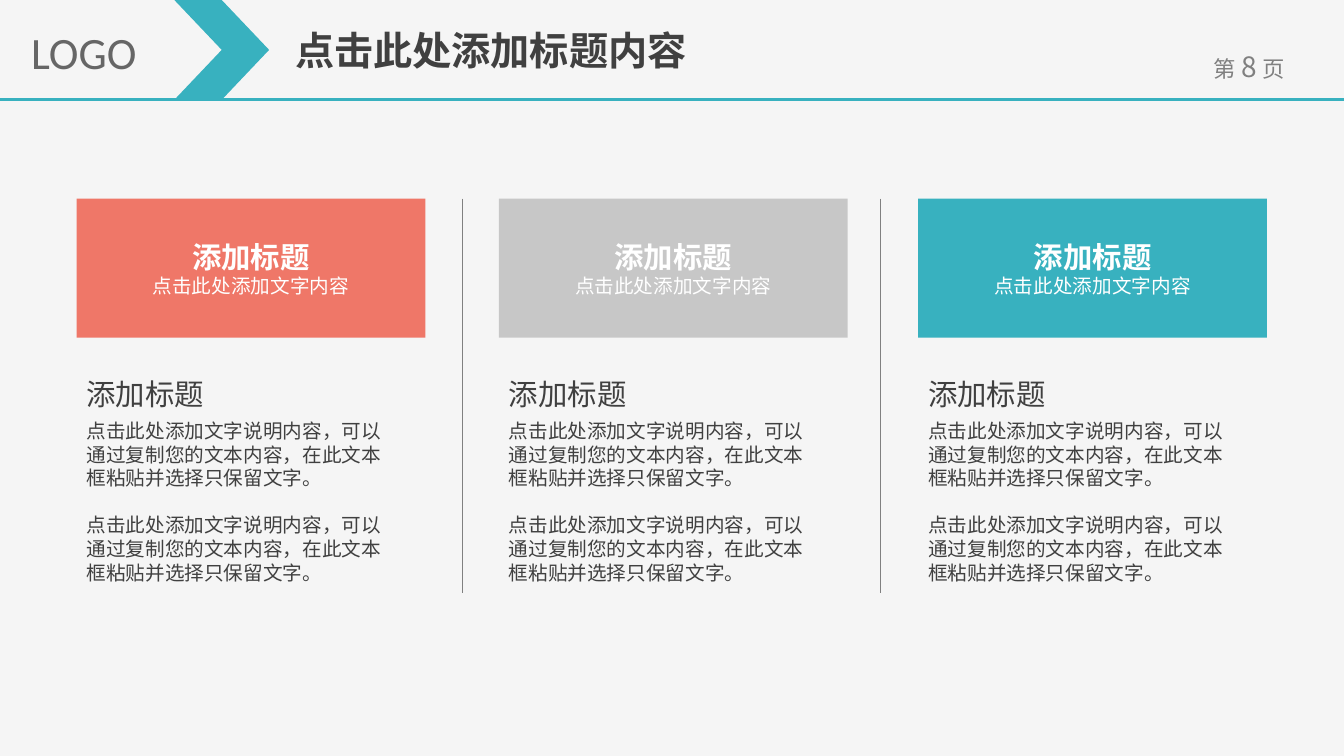
from dataclasses import dataclass

from lxml import etree
from pptx import Presentation
from pptx.dml.color import RGBColor
from pptx.enum.shapes import MSO_CONNECTOR, MSO_SHAPE
from pptx.enum.text import MSO_ANCHOR, PP_ALIGN
from pptx.oxml.ns import qn
from pptx.util import Pt

STRAIGHT = MSO_CONNECTOR.STRAIGHT
RECTANGLE, CHEVRON = MSO_SHAPE.RECTANGLE, MSO_SHAPE.CHEVRON
MIDDLE = MSO_ANCHOR.MIDDLE
LEFT, CENTER = PP_ALIGN.LEFT, PP_ALIGN.CENTER

BACKGROUND = RGBColor(0xF5, 0xF5, 0xF5)
TEAL = RGBColor(0x38, 0xB1, 0xBF)
CORAL = RGBColor(0xEF, 0x77, 0x68)
SILVER = RGBColor(0xC7, 0xC7, 0xC7)
WHITE = RGBColor(0xFF, 0xFF, 0xFF)
DARK = RGBColor(0x40, 0x40, 0x40)
LOGO_GRAY = RGBColor(0x66, 0x66, 0x66)
GRAY = RGBColor(0x80, 0x80, 0x80)

CHINESE_FONT = "Noto Sans CJK SC"
LATIN_FONT = "Calibri"
LINE_RATIO = 1.2
HEADING = "添加标题"
SUBTITLE = "点击此处添加文字内容"
BODY = "点击此处添加文字说明内容，可以通过复制您的文本内容，在此文本框粘贴并选择只保留文字。"


@dataclass(frozen=True)
class Box:
    left: float
    top: float
    width: float
    height: float

    def lengths(self) -> tuple:
        return Pt(self.left), Pt(self.top), Pt(self.width), Pt(self.height)


@dataclass(frozen=True)
class Run:
    text: str
    size: float
    color: RGBColor
    bold: bool = False
    font: str = CHINESE_FONT


@dataclass(frozen=True)
class Column:
    left: float
    color: RGBColor


COLUMNS = [Column(54.72, CORAL), Column(356.4, SILVER), Column(655.92, TEAL)]
DIVIDERS = [330.48, 628.56]
BANNER_TOP, DIVIDER_BOTTOM = 141.84, 423.36
HEADER_BOTTOM = 71.28


def write(frame, paragraphs: list[list[Run]], align=LEFT, gap: float = 0) -> None:
    for index, runs in enumerate(paragraphs):
        paragraph = frame.add_paragraph() if index else frame.paragraphs[0]
        paragraph.alignment = align
        if index and gap:
            paragraph.space_before = Pt(gap)
        if runs[0].font == CHINESE_FONT:
            paragraph.line_spacing = Pt(LINE_RATIO * max(run.size for run in runs))
        for item in runs:
            run = paragraph.add_run()
            run.text = item.text
            font = run.font
            font.name, font.size, font.bold = item.font, Pt(item.size), item.bold
            font.color.rgb = item.color
            east_asian = etree.SubElement(run._r.get_or_add_rPr(), qn("a:ea"))
            east_asian.set("typeface", item.font)


def add_text(slide, box: Box, paragraphs: list[list[Run]], align=LEFT,
             wrap: bool = True, gap: float = 0) -> None:
    frame = slide.shapes.add_textbox(*box.lengths()).text_frame
    frame.word_wrap = wrap
    write(frame, paragraphs, align, gap)


def add_filled(slide, preset, box: Box, color: RGBColor):
    shape = slide.shapes.add_shape(preset, *box.lengths())
    shape.shadow.inherit = False
    shape.fill.solid()
    shape.fill.fore_color.rgb = color
    shape.line.fill.background()
    return shape


def add_line(slide, x1: float, y1: float, x2: float, y2: float,
             color: RGBColor, width: float) -> None:
    line = slide.shapes.add_connector(STRAIGHT, Pt(x1), Pt(y1), Pt(x2), Pt(y2))
    line.line.color.rgb = color
    line.line.width = Pt(width)
    etree.SubElement(line._element.spPr, qn("a:effectLst"))


def add_header(slide) -> None:
    page_number = [Run("第", 16, GRAY), Run(" ", 18, GRAY), Run("8", 20, GRAY),
                   Run(" ", 18, GRAY), Run("页", 16, GRAY)]
    add_text(slide, Box(850.32, 31.68, 84.24, 31.68), [page_number], CENTER, wrap=False)
    add_line(slide, 0, HEADER_BOTTOM, 960, HEADER_BOTTOM, TEAL, 2.25)
    add_text(slide, Box(203.76, 15.12, 321.12, 41.04),
             [[Run("点击此处添加标题内容", 28, DARK, bold=True)]])
    chevron = add_filled(slide, CHEVRON, Box(124.56, 0, 67.68, HEADER_BOTTOM), TEAL)
    chevron.adjustments[0] = 0.5
    add_text(slide, Box(15.12, 14.4, 114.48, 46.08),
             [[Run("LOGO", 32, LOGO_GRAY, font=LATIN_FONT)]], wrap=False)


def add_column(slide, column: Column) -> None:
    banner = add_filled(slide, RECTANGLE, Box(column.left, BANNER_TOP, 249.12, 99.36),
                        column.color)
    banner.text_frame.vertical_anchor = MIDDLE
    write(banner.text_frame,
          [[Run(HEADING, 21, WHITE, bold=True)], [Run(SUBTITLE, 14, WHITE)]], CENTER)
    add_text(slide, Box(column.left, 264.96, 99.36, 32.4),
             [[Run(HEADING, 21, DARK)]], wrap=False)
    add_text(slide, Box(column.left, 295.92, 230.4, 126),
             [[Run(BODY, 14, DARK)]] * 2, gap=14 * LINE_RATIO)


def main() -> None:
    presentation = Presentation()
    presentation.slide_width, presentation.slide_height = Pt(960), Pt(540)
    slide = presentation.slides.add_slide(presentation.slide_layouts[6])
    slide.background.fill.solid()
    slide.background.fill.fore_color.rgb = BACKGROUND

    # Header band
    add_header(slide)

    # Dividers between the columns
    for x in DIVIDERS:
        add_line(slide, x, BANNER_TOP, x, DIVIDER_BOTTOM, GRAY, 0.25)

    # Three content columns
    for column in COLUMNS:
        add_column(slide, column)

    presentation.save("out.pptx")


if __name__ == "__main__":
    main()
